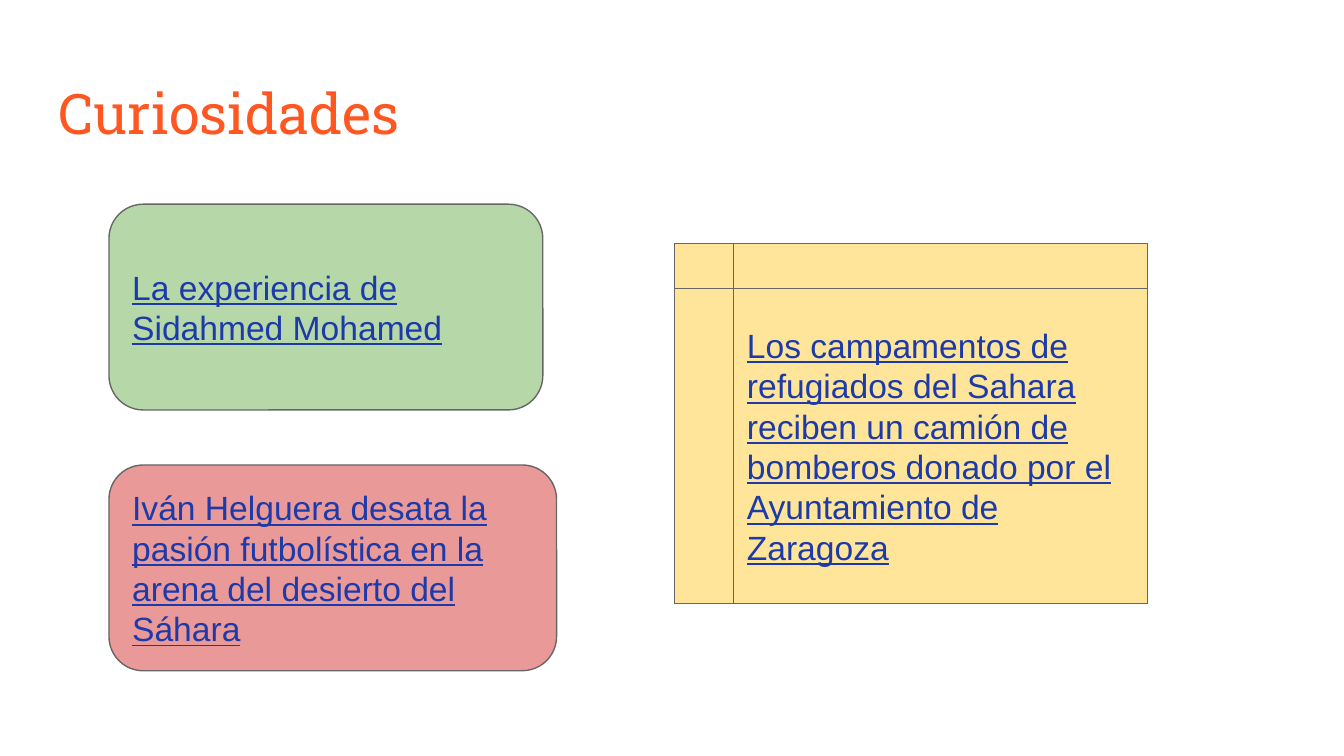
import pptx
import pptx.dml.color
import pptx.enum.shapes
import pptx.enum.text
import pptx.util

Cm = pptx.util.Cm
Kind = pptx.enum.shapes.MSO_SHAPE
Anchor = pptx.enum.text.MSO_ANCHOR

HUES = {
    "title": "FF5722",
    "link": "1C3AA9",
    "edge": "666666",
    "green": "B6D7A8",
    "yellow": "FFE599",
    "red": "EA9999",
}


def tint(name):
    return pptx.dml.color.RGBColor.from_string(HUES[name])


class Deck:
    inset = Cm(0.25)

    def __init__(self, wide, high):
        self.file = pptx.Presentation()
        self.file.slide_width, self.file.slide_height = Cm(wide), Cm(high)
        self.slide = self.file.slides.add_slide(self.file.slide_layouts[6])

    def label(self, shape, text, font, size, hue, anchor, under=False):
        frame = shape.text_frame
        frame.text = text
        frame.word_wrap = True
        frame.vertical_anchor = anchor
        frame.margin_left = frame.margin_right = self.inset
        frame.margin_top = frame.margin_bottom = self.inset
        line = frame.paragraphs[0]
        line.alignment = pptx.enum.text.PP_ALIGN.LEFT
        style = line.runs[0].font
        style.name, style.size = font, pptx.util.Pt(size)
        style.color.rgb = tint(hue)
        style.underline = under

    def title(self, text, box):
        shape = self.slide.shapes.add_textbox(*map(Cm, box))
        self.label(shape, text, "Roboto Slab", 30, "title", Anchor.TOP)

    def card(self, kind, text, hue, box):
        shape = self.slide.shapes.add_shape(kind, *map(Cm, box))
        shape.shadow.inherit = False
        shape.fill.solid()
        shape.fill.fore_color.rgb = tint(hue)
        shape.line.color.rgb = tint("edge")
        shape.line.width = pptx.util.Pt(0.75)
        self.label(shape, text, "Arial", 18, "link", Anchor.MIDDLE, True)


def main():
    deck = Deck(25.4, 14.29)
    deck.title("Curiosidades", (0.86, 1.24, 23.67, 1.6))
    deck.card(Kind.ROUNDED_RECTANGLE, "La experiencia de Sidahmed Mohamed",
              "green", (2.06, 3.86, 8.2, 3.89))
    deck.card(Kind.FLOWCHART_INTERNAL_STORAGE,
              "Los campamentos de refugiados del Sahara reciben un camión de "
              "bomberos donado por el Ayuntamiento de Zaragoza",
              "yellow", (12.75, 4.6, 8.94, 6.81))
    deck.card(Kind.FLOWCHART_ALTERNATE_PROCESS,
              "Iván Helguera desata la pasión futbolística en la arena del "
              "desierto del Sáhara",
              "red", (2.06, 8.79, 8.46, 3.89))
    deck.file.save("out.pptx")


if __name__ == "__main__":
    main()
